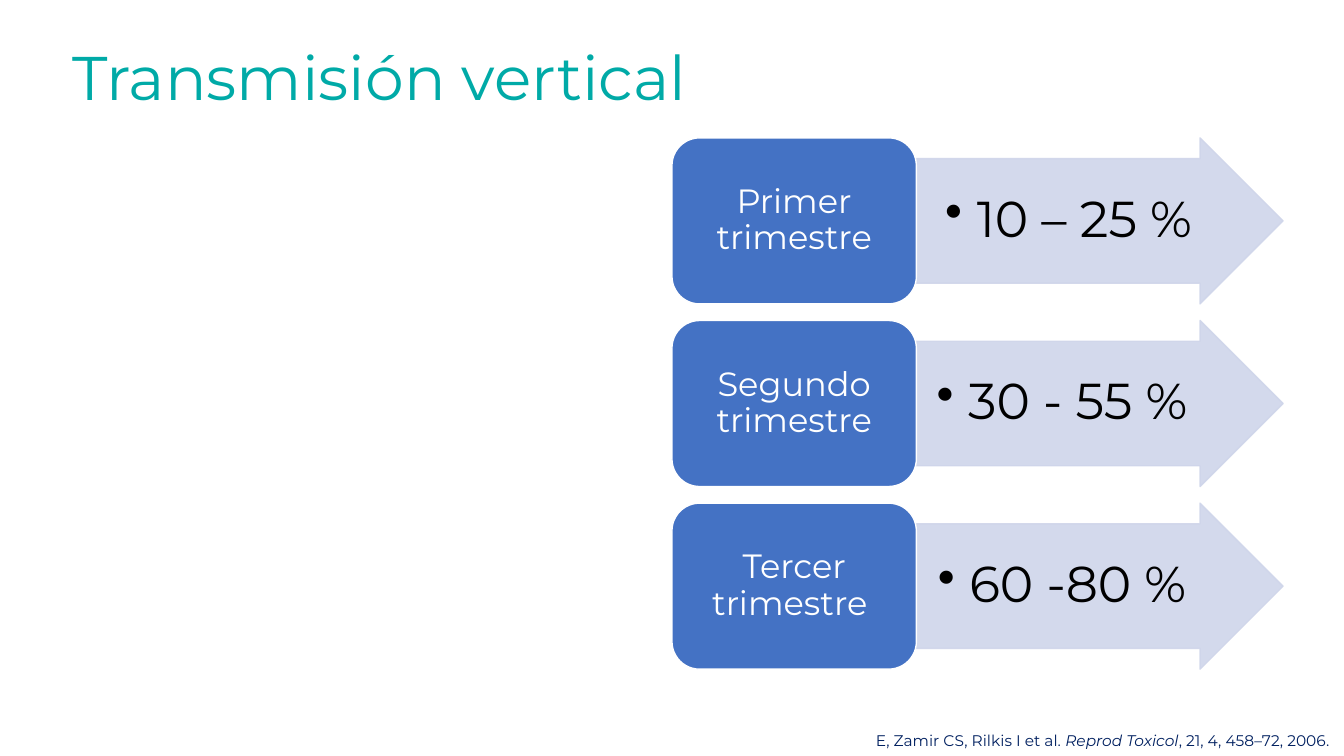
from dataclasses import dataclass

from lxml import etree
from pptx import Presentation
from pptx.dml.color import RGBColor
from pptx.enum import shapes, text
from pptx.oxml import ns
from pptx.util import Pt


@dataclass(frozen=True)
class Theme:
    font: str = "Montserrat"
    heading: str = "00AAA7"
    stage: str = "4472C4"
    stage_text: str = "FFFFFF"
    arrow: str = "CFD5EA"
    rate_text: str = "000000"
    citation: str = "002060"
    heading_size: int = 44
    rate_size: int = 36
    stage_size: int = 24
    citation_size: int = 11
    line_spacing: float = 0.9


THEME = Theme()

RATES = [
    ("Primer trimestre", "10 – 25 %"),
    ("Segundo trimestre", "30 - 55 % "),
    ("Tercer trimestre ", "60 -80 % "),
]
CITATION = [
    ("E, Zamir CS, Rilkis I et al. ", False),
    ("Reprod Toxicol", True),
    (", 21, 4, 458–72, 2006.", False),
]


def add_run(paragraph, wording, size, color, italic=False):
    run = paragraph.add_run()
    run.text = wording
    run.font.name = THEME.font
    run.font.size = Pt(size)
    run.font.italic = italic
    run.font.color.rgb = RGBColor.from_string(color)


def write_centred(frame, wording, size, color):
    frame.word_wrap = True
    frame.auto_size = text.MSO_AUTO_SIZE.NONE
    frame.vertical_anchor = text.MSO_ANCHOR.MIDDLE
    paragraph = frame.paragraphs[0]
    paragraph.alignment = text.PP_ALIGN.CENTER
    paragraph.line_spacing = THEME.line_spacing
    add_run(paragraph, wording, size, color)


def add_block(slide, preset, box, fill, line):
    block = slide.shapes.add_shape(preset, *map(Pt, box))
    block.shadow.inherit = False
    block.fill.solid()
    block.fill.fore_color.rgb = RGBColor.from_string(fill)
    block.line.color.rgb = RGBColor.from_string(line)
    block.line.width = Pt(1)
    return block


def set_opacity(block, percent):
    for color in block._element.spPr.iter(ns.qn("a:srgbClr")):
        etree.SubElement(color, ns.qn("a:alpha"), val=str(percent * 1000))


def add_bullet(paragraph, indent):
    properties = paragraph._p.get_or_add_pPr()
    properties.set("marL", str(Pt(indent)))
    properties.set("indent", str(-Pt(indent)))
    etree.SubElement(properties, ns.qn("a:buChar"), char="•")


# Heading in the title placeholder
def place_heading(slide, box, wording):
    heading = slide.shapes.title
    heading.left, heading.top, heading.width, heading.height = map(Pt, box)
    write_centred(heading.text_frame, wording, THEME.heading_size, THEME.heading)


# One trimester: arrow with its rate, then the stage box
def place_trimester(slide, box, stage_name, rate):
    left, top, width, height = box
    stage_width = width * 0.4
    arrow = add_block(slide, shapes.MSO_SHAPE.RIGHT_ARROW,
                      (left + stage_width, top, width - stage_width, height),
                      THEME.arrow, THEME.arrow)
    arrow.adjustments[0], arrow.adjustments[1] = 0.75, 0.5
    set_opacity(arrow, 90)
    frame = arrow.text_frame
    frame.margin_left = frame.margin_right = Pt(2)
    frame.margin_top = frame.margin_bottom = Pt(2)
    add_bullet(frame.paragraphs[0], 22.5)
    write_centred(frame, rate, THEME.rate_size, THEME.rate_text)

    stage = add_block(slide, shapes.MSO_SHAPE.ROUNDED_RECTANGLE,
                      (left, top, stage_width, height),
                      THEME.stage, THEME.stage_text)
    write_centred(stage.text_frame, stage_name, THEME.stage_size, THEME.stage_text)


# Rows of trimesters, with gaps of a tenth of the row height
def place_rates(slide, box, rates):
    left, top, width, height = box
    row_height = height / (1.1 * len(rates) - 0.1)
    for index, (stage_name, rate) in enumerate(rates):
        row_top = top + index * row_height * 1.1
        place_trimester(slide, (left, row_top, width, row_height), stage_name, rate)


# Citation at the foot
def place_citation(slide, box, parts):
    frame = slide.shapes.add_textbox(*map(Pt, box)).text_frame
    frame.word_wrap = False
    for wording, italic in parts:
        add_run(frame.paragraphs[0], wording, THEME.citation_size,
                THEME.citation, italic)


def main():
    deck = Presentation()
    deck.slide_width, deck.slide_height = Pt(960), Pt(540)
    slide = deck.slides.add_slide(deck.slide_layouts.get_by_name("Title Only"))
    place_heading(slide, (-13.5, 30, 581, 55.5), "Transmisión vertical ")
    place_rates(slide, (480, 98.5, 436.5, 379.5), RATES)
    place_citation(slide, (618.5, 518.5, 341.5, 21), CITATION)
    deck.save("out.pptx")


if __name__ == "__main__":
    main()
